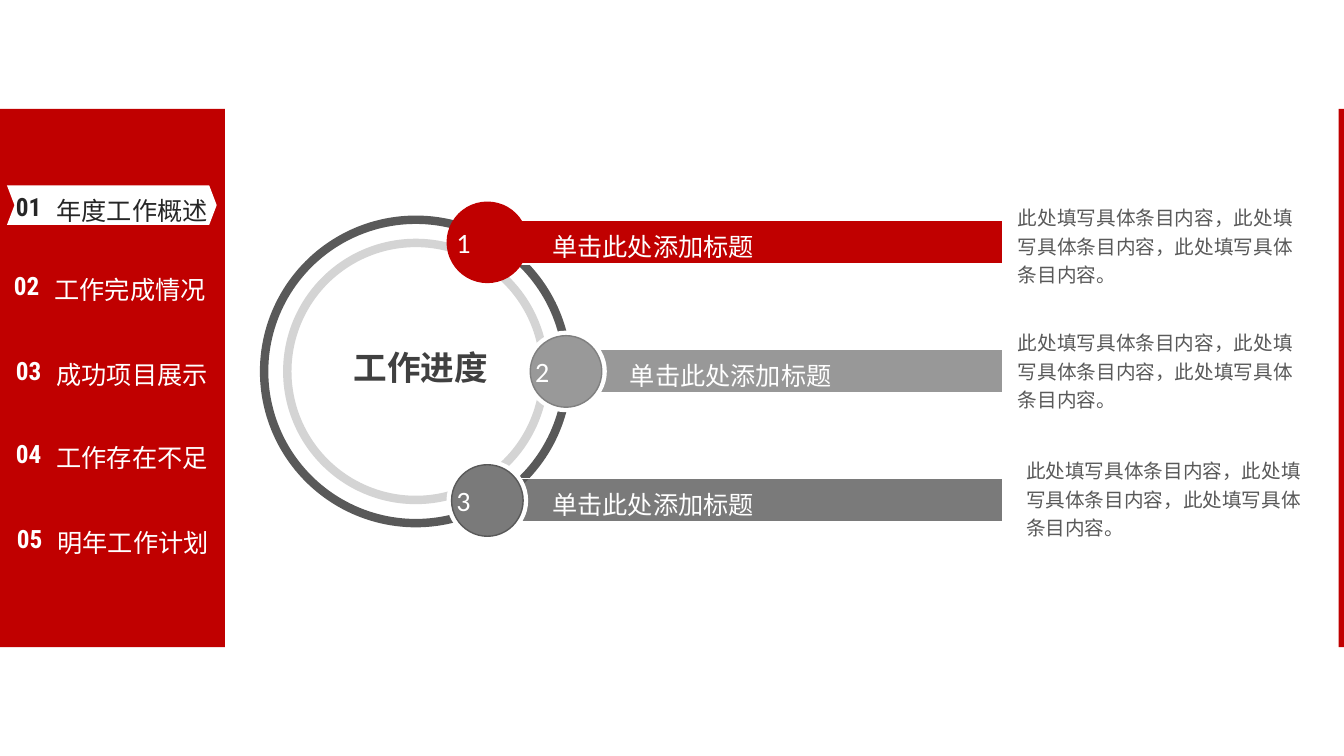
import pptx
import pptx.util
import pptx.dml.color
import pptx.enum.shapes
import pptx.enum.text
import pptx.oxml.ns
import lxml.etree

Pt = pptx.util.Pt
RGB = pptx.dml.color.RGBColor
SHAPE = pptx.enum.shapes.MSO_SHAPE
ALIGN = pptx.enum.text.PP_ALIGN
qn = pptx.oxml.ns.qn

RED = RGB(0xC0, 0x00, 0x00)
WHITE = RGB(0xFF, 0xFF, 0xFF)
INK = RGB(0x26, 0x26, 0x26)
CHARCOAL = RGB(0x40, 0x40, 0x40)
DARK = RGB(0x59, 0x59, 0x59)
MID = RGB(0x7F, 0x7F, 0x7F)
GRAY = RGB(0x80, 0x80, 0x80)
CJK = "Noto Sans CJK SC"

# label, left and top of its number
MENU = [
    ("年度工作概述", 4.3, 133.2),
    ("工作完成情况", 2.9, 189.2),
    ("成功项目展示", 4.3, 250),
    ("工作存在不足", 4.3, 309.6),
    ("明年工作计划", 5, 370.3),
]
HUB = "工作进度"
ITEM_TITLE = "单击此处添加标题"
ITEM_TEXT = "此处填写具体条目内容，" * 2 + "此处填写具体条目内容。"
# disc centre x, bar left, title left, title width, text (left, top, width)
ITEMS = [
    (348.1, 372.2, 387.4, 166.3, (720, 140.4, 219.6)),
    (404.3, 422.6, 442.8, 159.9, (720, 229.7, 215.3)),
    (348.1, 372.2, 387.4, 166.3, (725.8, 321.1, 213.8)),
]
# bar colour, halo colour, disc colour, opacity, has a disc outline
LOOKS = [
    (RED, RED, RED, 100, False),
    (MID, WHITE, GRAY, 80, True),
    (DARK, WHITE, DARK, 80, True),
]
HUB_X, HUB_Y = 297, 265.3
ITEM_STEP = 92.2
BAR_RIGHT, BAR_H = 716.4, 31
HALO, DISC = 58.3, 51.1
BAND_TOP, BAND_H = 77.8, 384.5

prs = pptx.Presentation()
prs.slide_width, prs.slide_height = Pt(960), Pt(540)
s = prs.slides.add_slide(prs.slide_layouts[6])


def set_opacity(fill_parent, percent):
    if percent < 100:
        color = fill_parent.find(qn("a:solidFill"))[0]
        lxml.etree.SubElement(color, qn("a:alpha"), val=str(percent * 1000))


def add_shape(kind, x, y, w, h, fill=None, line=None, width=1,
              fill_opacity=100, line_opacity=100):
    sp = s.shapes.add_shape(kind, Pt(x), Pt(y), Pt(w), Pt(h))
    sp.shadow.inherit = False
    if fill is None:
        sp.fill.background()
    else:
        sp.fill.solid()
        sp.fill.fore_color.rgb = fill
        set_opacity(sp._element.spPr, fill_opacity)
    if line is None:
        sp.line.fill.background()
    else:
        sp.line.color.rgb = line
        sp.line.width = Pt(width)
        set_opacity(sp._element.spPr.find(qn("a:ln")), line_opacity)
    return sp


def add_circle(cx, cy, size, **style):
    add_shape(SHAPE.OVAL, cx - size / 2, cy - size / 2, size, size, **style)


def add_text(text, x, y, w, h, size, font, color, bold=None, align=None, spacing=None):
    tf = s.shapes.add_textbox(Pt(x), Pt(y), Pt(w), Pt(h)).text_frame
    tf.word_wrap = True
    tf.auto_size = pptx.enum.text.MSO_AUTO_SIZE.SHAPE_TO_FIT_TEXT
    p = tf.paragraphs[0]
    p.text = text
    p.alignment = align
    p.line_spacing = spacing
    p.font.size = Pt(size)
    p.font.bold = bold
    p.font.color.rgb = color
    p.font.name = font
    defaults = p._p.pPr.find(qn("a:defRPr"))
    lxml.etree.SubElement(defaults, qn("a:ea"), typeface=CJK)


# Side menu
add_shape(SHAPE.RECTANGLE, -4.3, BAND_TOP, 164.9, BAND_H, RED)
marker = add_shape(SHAPE.CHEVRON, 5, 132.5, 149.8, 28.1, WHITE)
marker.adjustments[0] = 0.19
for i, (label, x, y) in enumerate(MENU):
    color = INK if i == 0 else WHITE
    add_text(f"{i + 1:02}", x, y, 40.3, 28.8, 18, "Roboto Condensed", color, bold=True)
    add_text(label, x + 16.6, y - 7.8, 146.9, 36, 18, "Open Sans", color,
             align=ALIGN.CENTER, spacing=1.5)

# Hub rings
add_circle(HUB_X, HUB_Y, 216.7, line=DARK, width=6)
add_circle(HUB_X, HUB_Y, 183.6, fill=WHITE, fill_opacity=25,
           line=DARK, width=6, line_opacity=25)
add_text(HUB, 245.5, 244.1, 121.7, 36, 24, CJK, CHARCOAL, bold=True)

# Numbered items
for i, (item, look) in enumerate(zip(ITEMS, LOOKS)):
    cx, bar_x, title_x, title_w, (text_x, text_y, text_w) = item
    bar_color, halo_color, disc_color, opacity, outlined = look
    cy = HUB_Y + (i - 1) * ITEM_STEP
    add_shape(SHAPE.RECTANGLE, bar_x, cy - BAR_H / 2, BAR_RIGHT - bar_x, BAR_H,
              bar_color, WHITE, fill_opacity=opacity)
    add_text(ITEM_TITLE, title_x, cy - 11.2, title_w, 28.8, 18, CJK, WHITE)
    add_circle(cx, cy, HALO, fill=halo_color)
    add_circle(cx, cy, DISC, fill=disc_color, fill_opacity=opacity,
               line=disc_color if outlined else None)
    add_text(str(i + 1), cx - HALO / 2, cy - BAR_H / 2, 59, 31, 20, "Calibri", WHITE)
    add_text(ITEM_TEXT, text_x, text_y, text_w, 68.4, 14, "Calibri", DARK, spacing=1.2)

# Right edge
add_shape(SHAPE.RECTANGLE, 956.2, BAND_TOP, 3.8, BAND_H, RED)

prs.save("out.pptx")
